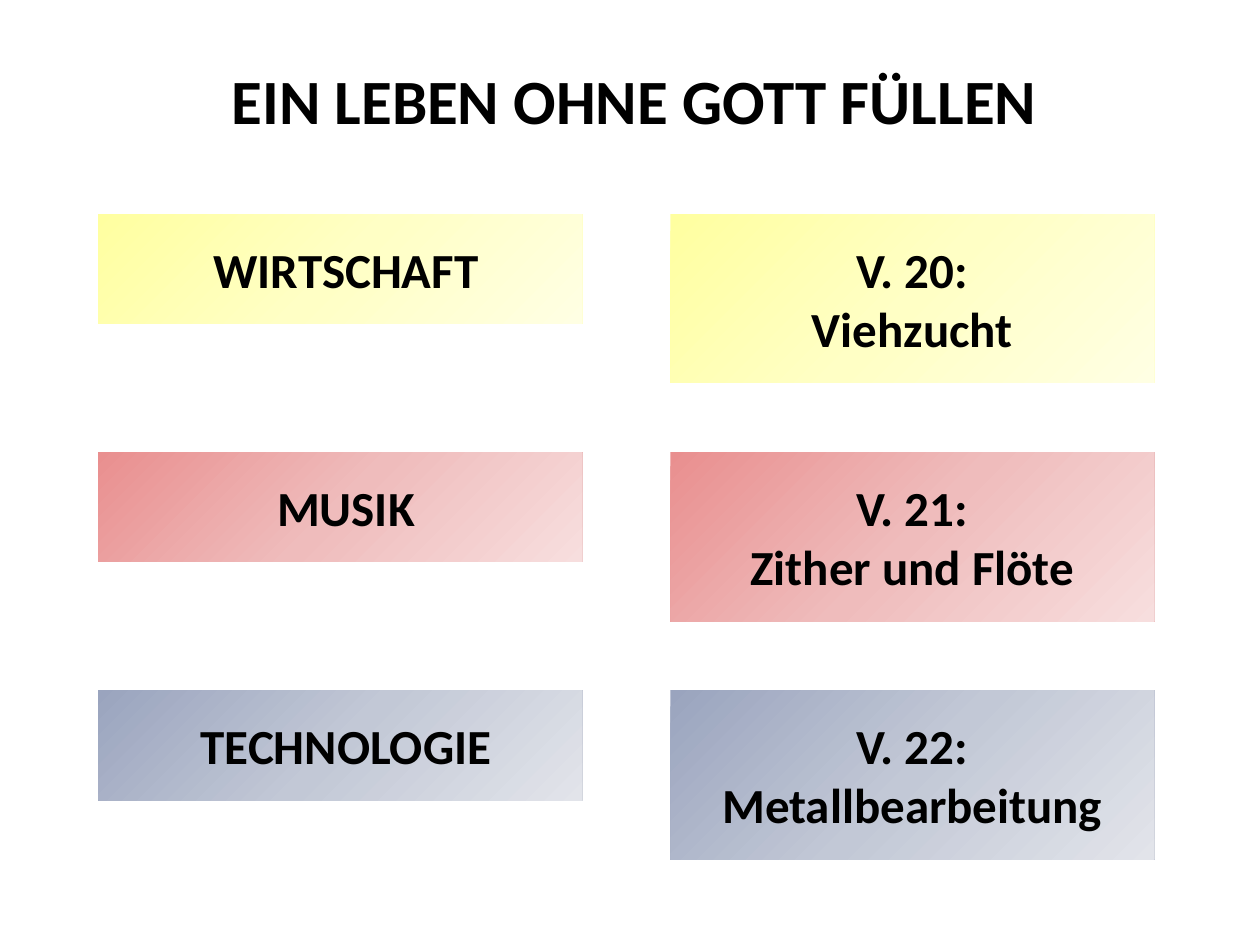
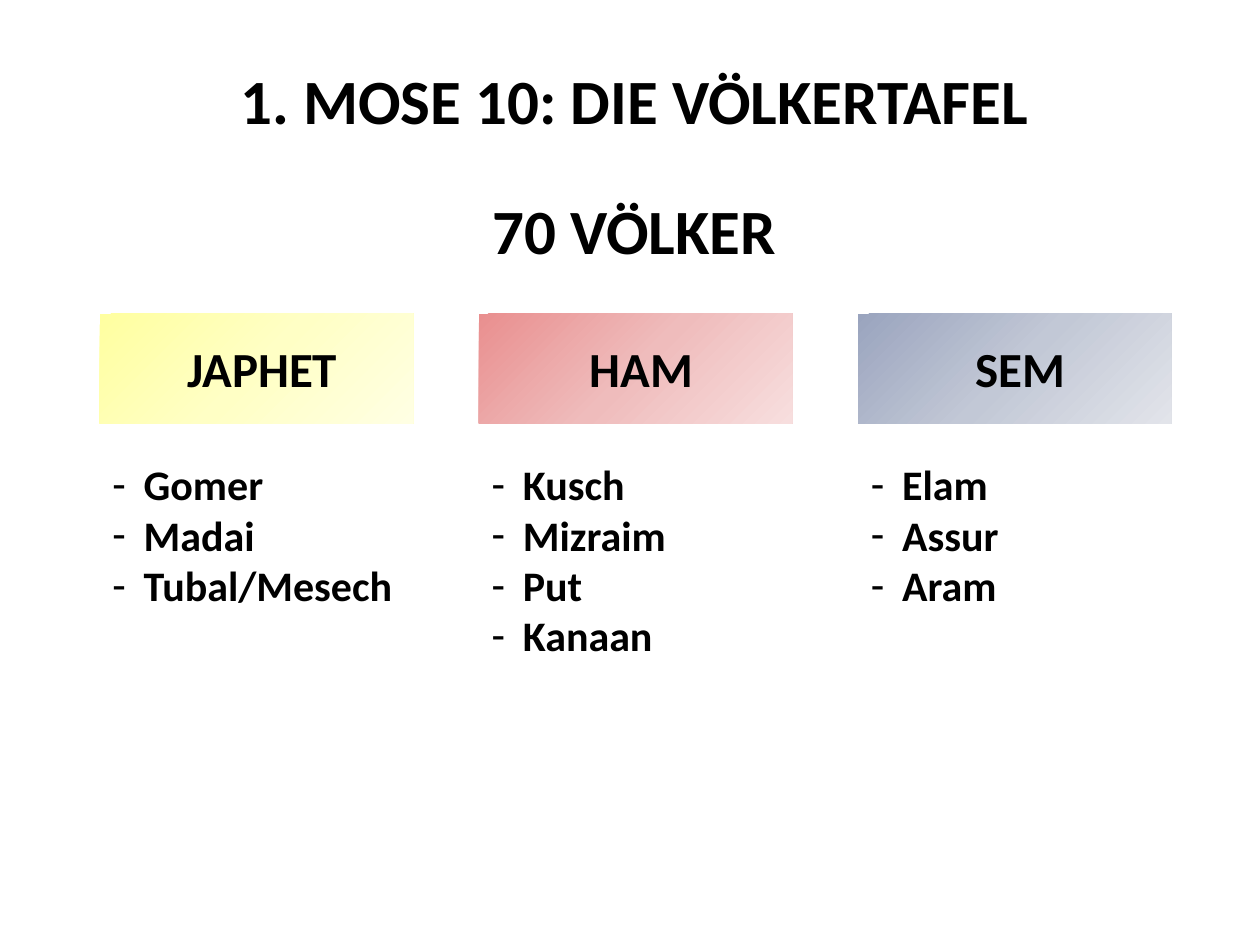
from copy import deepcopy
from lxml import etree
from pptx import Presentation
from pptx.dml.color import RGBColor
from pptx.enum import shapes, text
from pptx.oxml import ns
from pptx.util import Inches, Pt

BLACK = RGBColor(0x00, 0x00, 0x00)
WHITE = RGBColor(0xFF, 0xFF, 0xFF)
YELLOW = [RGBColor(0xFF, 0xFF, b) for b in (0xA0, 0xC5, 0xE3)]
RED = [RGBColor.from_string(c) for c in ("E98F8F", "EFBCBC", "F7DEDE")]
BLUE = [RGBColor.from_string(c) for c in ("9AA4BE", "C2C8D6", "E2E4EA")]
FONT = "Calibri"
CENTER, LEFT = text.PP_ALIGN.CENTER, text.PP_ALIGN.LEFT


def write(shape, lines, box, size=28, align=CENTER, pad=0.05, shift=0, dash=False):
    """Place a shape at box and fill it with bold lines; shift adds left inset."""
    shape.left, shape.top, shape.width, shape.height = map(Inches, box)
    frame = shape.text_frame
    frame.word_wrap = True
    frame.auto_size = text.MSO_AUTO_SIZE.NONE
    frame.vertical_anchor = text.MSO_ANCHOR.TOP
    frame.margin_left, frame.margin_right = Inches(0.1 + shift), Inches(0.1)
    frame.margin_top = frame.margin_bottom = Inches(pad)
    frame.text = "\n".join(lines)
    for para in frame.paragraphs:
        para.alignment = align
        para.space_before = Pt(0)
        if dash:
            props = para._p.get_or_add_pPr()
            props.set("marL", str(Inches(0.25)))
            props.set("indent", str(Inches(-0.25)))
            etree.SubElement(props, ns.qn("a:buChar")).set("char", "-")
        font = para.runs[0].font
        font.name, font.size, font.bold = FONT, Pt(size), True
        font.color.rgb = BLACK


def panel(slide, lines, box, shades, shift=0):
    """Add a borderless box with a diagonal three-colour gradient."""
    shape = slide.shapes.add_shape(shapes.MSO_SHAPE.RECTANGLE, *map(Inches, box))
    shape.shadow.inherit = False
    shape.line.fill.background()
    shape.fill.gradient()
    shape.fill.gradient_angle = 315
    stops = shape._element.spPr.find(".//" + ns.qn("a:gsLst"))
    stops.insert(1, deepcopy(stops[0]))
    for stop, shade, place in zip(shape.fill.gradient_stops, shades, (0, 0.5, 1)):
        stop.color.rgb = shade
        stop.position = place
    write(shape, lines, box, pad=0.2, shift=shift)


deck = Presentation()
deck.slide_width, deck.slide_height = Inches(10), Inches(7.5)

# Title Only for the first slide, Comparison (four bodies) for the second
life, table = [deck.slides.add_slide(deck.slide_layouts[n]) for n in (5, 4)]
titles = [(life, "EIN LEBEN OHNE GOTT FÜLLEN"), (table, "1. MOSE 10: DIE VÖLKERTAFEL")]
for slide, title in titles:
    head = slide.shapes.title
    head.fill.solid()
    head.fill.fore_color.rgb = WHITE
    write(head, [title], (0.43, 0.44, 9.21, 0.63), size=36)

# Slide 1: fields of life and their verses
fields = [
    ("WIRTSCHAFT", ["V. 20:", "Viehzucht"], YELLOW),
    ("MUSIK", ["V. 21:", "Zither und Flöte"], RED),
    ("TECHNOLOGIE", ["V. 22:", "Metallbearbeitung"], BLUE),
]
for row, (field, verse, shades) in enumerate(fields):
    top = 1.7 + 1.89 * row
    panel(life, [field], (0.78, top, 3.84, 0.87), shades, shift=0.09)
    panel(life, verse, (5.32, top, 3.84, 1.34), shades)

# Slide 2: the three sons and their peoples
count, *lists = [b for b in table.placeholders if b.placeholder_format.idx]
write(count, ["70 VÖLKER"], (0.43, 1.47, 9.21, 0.71), size=36)
sons = [
    ("JAPHET", ["Gomer", "Madai", "Tubal/Mesech"], YELLOW),
    ("HAM", ["Kusch", "Mizraim", "Put", "Kanaan"], RED),
    ("SEM", ["Elam", "Assur", "Aram"], BLUE),
]
for col, (son, tribes, shades) in enumerate(sons):
    left = 0.79 + 3.01 * col
    panel(table, [son], (left, 2.49, 2.49, 0.87), shades, shift=0.09)
    write(lists[col], tribes, (left, 3.59, 2.49, 0.1 + 0.4 * len(tribes)),
          size=24, align=LEFT, dash=True)

deck.save("out.pptx")
